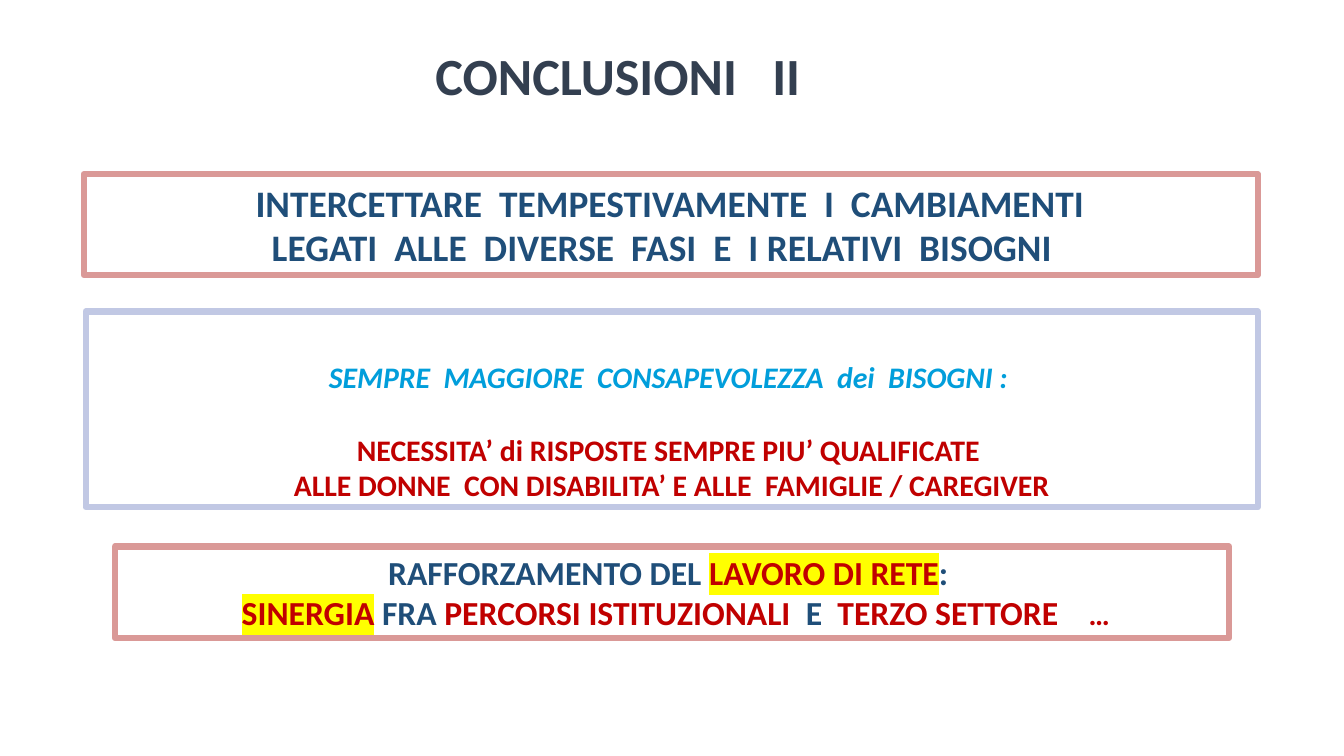
from lxml import etree
from pptx import Presentation
from pptx.dml.color import RGBColor
from pptx.enum.shapes import MSO_SHAPE
from pptx.enum.text import MSO_ANCHOR, PP_ALIGN
from pptx.oxml.ns import qn
from pptx.util import Cm, Pt

RECTANGLE = MSO_SHAPE.RECTANGLE
TOP, MIDDLE = MSO_ANCHOR.TOP, MSO_ANCHOR.MIDDLE
CENTER = PP_ALIGN.CENTER

FONT = "Calibri"
WHITE, SLATE, NAVY, SKY, RED = "FFFFFF", "333F50", "1F4E79", "019EDB", "C00000"
ROSE, LAVENDER, YELLOW = "DA9997", "C1C8E4", "FFFF00"
INSET = 0.17


def color(hex_code):
    return RGBColor.from_string(hex_code)


def add_box(slide, left, top, width, height, border=None, fill=None,
            anchor=MIDDLE, top_inset=INSET):
    """Add a rectangle and return its text frame."""
    box = slide.shapes.add_shape(RECTANGLE, Cm(left), Cm(top), Cm(width), Cm(height))
    box.shadow.inherit = False
    if fill:
        box.fill.solid()
        box.fill.fore_color.rgb = color(fill)
    else:
        box.fill.background()
    if border:
        box.line.color.rgb = color(border)
        box.line.width = Pt(4.5)
    else:
        box.line.fill.background()
    frame = box.text_frame
    frame.word_wrap = True
    frame.vertical_anchor = anchor
    frame.margin_top, frame.margin_bottom = Cm(top_inset), Cm(INSET)
    return frame


def highlight(run, hex_code):
    marker = etree.Element(qn("a:highlight"))
    etree.SubElement(marker, qn("a:srgbClr"), val=hex_code)
    run.font._element.find(qn("a:solidFill")).addnext(marker)


def add_run(paragraph, text, size, hex_code, italic=False, marker=None):
    run = paragraph.add_run()
    run.text = text
    font = run.font
    font.name, font.size, font.bold, font.italic = FONT, Pt(size), True, italic
    font.color.rgb = color(hex_code)
    if marker:
        highlight(run, marker)


def write_lines(frame, lines):
    """Write one centred paragraph per line; a line is a list of add_run arguments."""
    for index, line in enumerate(lines):
        paragraph = frame.add_paragraph() if index else frame.paragraphs[0]
        paragraph.alignment = CENTER
        for run_args in line:
            add_run(paragraph, *run_args)


def main():
    prs = Presentation()
    prs.slide_width, prs.slide_height = Cm(33.87), Cm(19.05)
    slide = prs.slides.add_slide(prs.slide_layouts[6])

    title = add_box(slide, 0.64, 0.91, 29.87, 3.45, fill=WHITE, anchor=TOP)
    write_lines(title, [[("CONCLUSIONI   II", 37.3, SLATE)]])

    changes = add_box(slide, 2.11, 4.39, 29.59, 2.54, ROSE)
    write_lines(changes, [
        [(" ", 24, NAVY),
         ("INTERCETTARE  TEMPESTIVAMENTE  I  CAMBIAMENTI ", 26.7, NAVY)],
        [("LEGATI  ALLE  DIVERSE  FASI  E  I RELATIVI  BISOGNI  ", 26.7, NAVY)],
    ])

    needs = add_box(slide, 2.16, 7.85, 29.54, 4.93, LAVENDER, anchor=TOP, top_inset=1.2)
    write_lines(needs, [
        [("SEMPRE  MAGGIORE  CONSAPEVOLEZZA  dei  BISOGNI : ", 21.3, SKY, True)],
        [("NECESSITA’ di RISPOSTE SEMPRE PIU’ QUALIFICATE ", 21.3, RED)],
        [("ALLE DONNE  CON DISABILITA’ E ALLE  FAMIGLIE / CAREGIVER", 21.3, RED)],
    ])
    needs.paragraphs[1].space_before = Pt(26)

    network = add_box(slide, 2.9, 13.77, 28.07, 2.31, ROSE)
    write_lines(network, [
        [("RAFFORZAMENTO DEL ", 24, NAVY),
         ("LAVORO DI RETE", 24, RED, False, YELLOW),
         (": ", 24, NAVY)],
        [(" ", 24, NAVY),
         ("SINERGIA", 24, RED, False, YELLOW),
         (" FRA ", 24, NAVY),
         ("PERCORSI ISTITUZIONALI  ", 24, RED),
         ("E  ", 24, NAVY),
         ("TERZO SETTORE    ", 24, RED),
         ("…", 21.3, RED)],
    ])

    prs.save("out.pptx")


if __name__ == "__main__":
    main()
